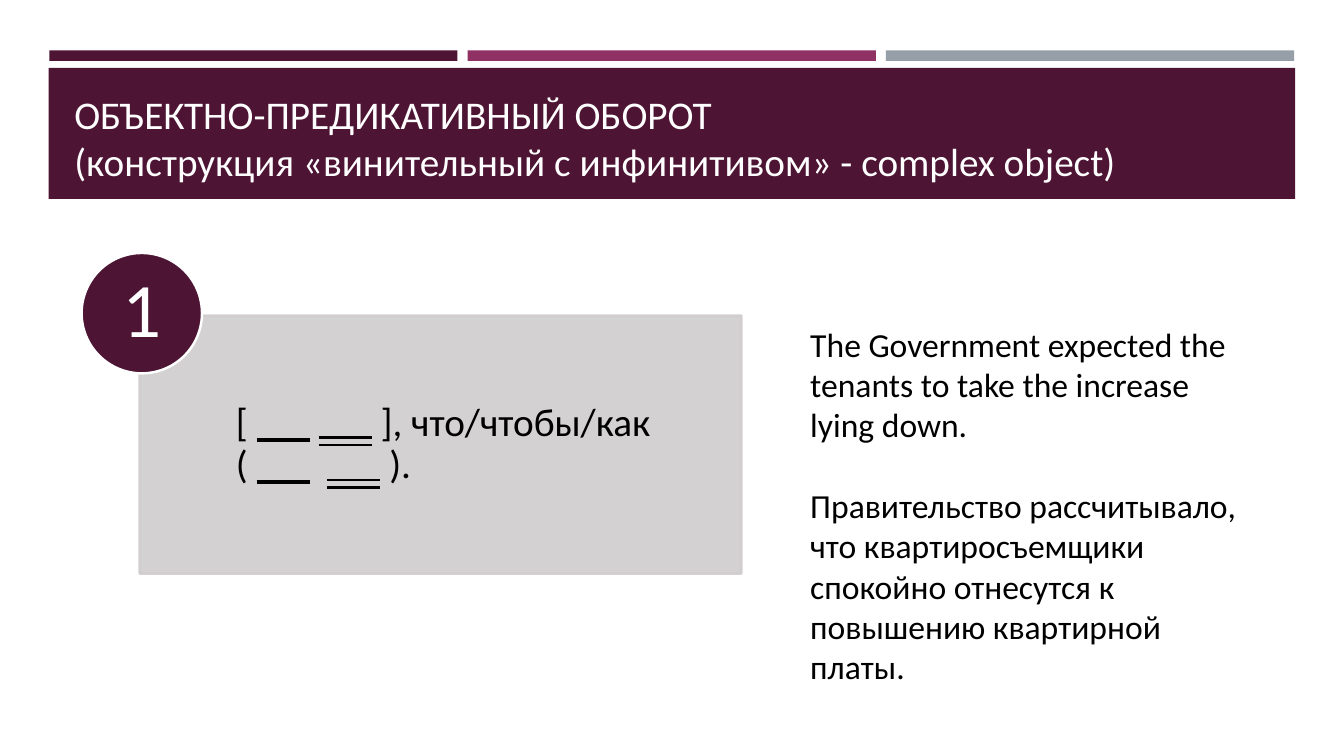
from dataclasses import dataclass

from lxml import etree
from pptx import Presentation
from pptx.dml.color import RGBColor
from pptx.enum.shapes import MSO_SHAPE
from pptx.enum.text import MSO_ANCHOR, MSO_UNDERLINE, PP_ALIGN
from pptx.oxml.ns import qn
from pptx.util import Pt

RECTANGLE, OVAL = MSO_SHAPE.RECTANGLE, MSO_SHAPE.OVAL
TOP, MIDDLE, BOTTOM = MSO_ANCHOR.TOP, MSO_ANCHOR.MIDDLE, MSO_ANCHOR.BOTTOM
LEFT, CENTER = PP_ALIGN.LEFT, PP_ALIGN.CENTER
SINGLE, DOUBLE = MSO_UNDERLINE.SINGLE_LINE, MSO_UNDERLINE.DOUBLE_LINE

FONT = "Calibri"
PLUM, MAGENTA, STEEL = "4D1434", "903163", "969FA7"
PANEL, WHITE, BLACK = "D0CCCE", "FFFFFF", "000000"
BLANK = " " * 6  # underlined, it stands for a sentence member


@dataclass
class Box:
    left: float
    top: float
    width: float
    height: float

    def lengths(self) -> tuple:
        return Pt(self.left), Pt(self.top), Pt(self.width), Pt(self.height)


@dataclass
class Panel:
    box: Box
    fill: str
    kind: MSO_SHAPE = RECTANGLE
    line: str | None = None
    opacity: int = 100


@dataclass
class Piece:
    text: str
    underline: MSO_UNDERLINE | None = None
    bold: bool = False


def set_color(color_format, color: str) -> None:
    color_format.rgb = RGBColor.from_string(color)


def add_panel(slide, panel: Panel) -> None:
    shape = slide.shapes.add_shape(panel.kind, *panel.box.lengths())
    shape.shadow.inherit = False
    shape.fill.solid()
    set_color(shape.fill.fore_color, panel.fill)
    if panel.line is None:
        shape.line.fill.background()
    else:
        shape.line.width = Pt(1.75)
        shape.line.fill.solid()
        set_color(shape.line.fill.fore_color, panel.line)
    if panel.opacity < 100:
        for element in shape.element.spPr.iter(qn("a:srgbClr")):
            etree.SubElement(element, qn("a:alpha"), val=str(panel.opacity * 1000))


def add_text(slide, box: Box, paragraphs: list[list[Piece]], *, size: float,
             color: str = BLACK, anchor: MSO_ANCHOR = TOP, align: PP_ALIGN = LEFT,
             spacing: float = 1.0, gap: float = 0,
             insets: tuple = (7.2, 3.6, 7.2, 3.6)) -> None:
    """Write paragraphs of pieces; a newline in a piece breaks the line."""
    frame = slide.shapes.add_textbox(*box.lengths()).text_frame
    frame.word_wrap = True
    frame.vertical_anchor = anchor
    frame.margin_left, frame.margin_top, frame.margin_right, frame.margin_bottom = map(Pt, insets)
    for index, pieces in enumerate(paragraphs):
        paragraph = frame.add_paragraph() if index else frame.paragraphs[0]
        paragraph.alignment = align
        paragraph.line_spacing = spacing
        paragraph.space_before = Pt(gap if index else 0)
        paragraph.font.size = Pt(size)
        for piece in pieces:
            for row, text in enumerate(piece.text.split("\n")):
                if row:
                    paragraph.add_line_break()
                run = paragraph.add_run()
                run.text = text
                run.font.name = FONT
                run.font.size = Pt(size)
                run.font.bold = piece.bold
                run.font.underline = piece.underline
                set_color(run.font.color, color)


def build_slide(slide) -> None:
    # Header stripes and title band
    for index, color in enumerate((PLUM, MAGENTA, STEEL)):
        add_panel(slide, Panel(Box(35.2 + index * 298.8, 36, 291.6, 7.5), color))
    add_panel(slide, Panel(Box(34.8, 48.5, 890.4, 93.6), PLUM))
    add_text(slide, Box(46, 55.4, 868.3, 80),
             [[Piece("ОБЪЕКТНО-ПРЕДИКАТИВНЫЙ ОБОРОТ\n"
                     "(конструкция «винительный с инфинитивом» - complex object)")]],
             size=28, color=WHITE, anchor=BOTTOM)

    # Sentence pattern
    add_panel(slide, Panel(Box(99.8, 225.4, 429.8, 184.3), PANEL, line=PANEL, opacity=90))
    pattern = [Piece("[ "), Piece(BLANK, SINGLE), Piece(" "), Piece(BLANK, DOUBLE),
               Piece(" ], что/чтобы/как\n( "), Piece(BLANK, SINGLE), Piece("  "),
               Piece(BLANK, DOUBLE, bold=True), Piece(" ).")]
    add_text(slide, Box(168.5, 225.4, 361, 184.3), [pattern], size=28,
             anchor=MIDDLE, spacing=0.9, insets=(0, 16, 16, 16))

    # Number badge
    add_panel(slide, Panel(Box(58.3, 180.7, 86, 86), PLUM, OVAL, line=WHITE))
    add_text(slide, Box(70.6, 193, 61.2, 60.5), [[Piece("1")]], size=55, color=WHITE,
             anchor=MIDDLE, align=CENTER, spacing=0.9, insets=(0, 0, 0, 0))

    # Example and its translation
    add_text(slide, Box(571.7, 227.5, 333.4, 269.3),
             [[Piece("The Government expected the tenants to take the increase lying down.")],
              [Piece("Правительство рассчитывало, что квартиросъемщики спокойно "
                     "отнесутся к повышению квартирной платы.")]],
             size=24, gap=29)


def main() -> None:
    presentation = Presentation()
    presentation.slide_width, presentation.slide_height = Pt(960), Pt(540)
    build_slide(presentation.slides.add_slide(presentation.slide_layouts[6]))
    presentation.save("out.pptx")


if __name__ == "__main__":
    main()
